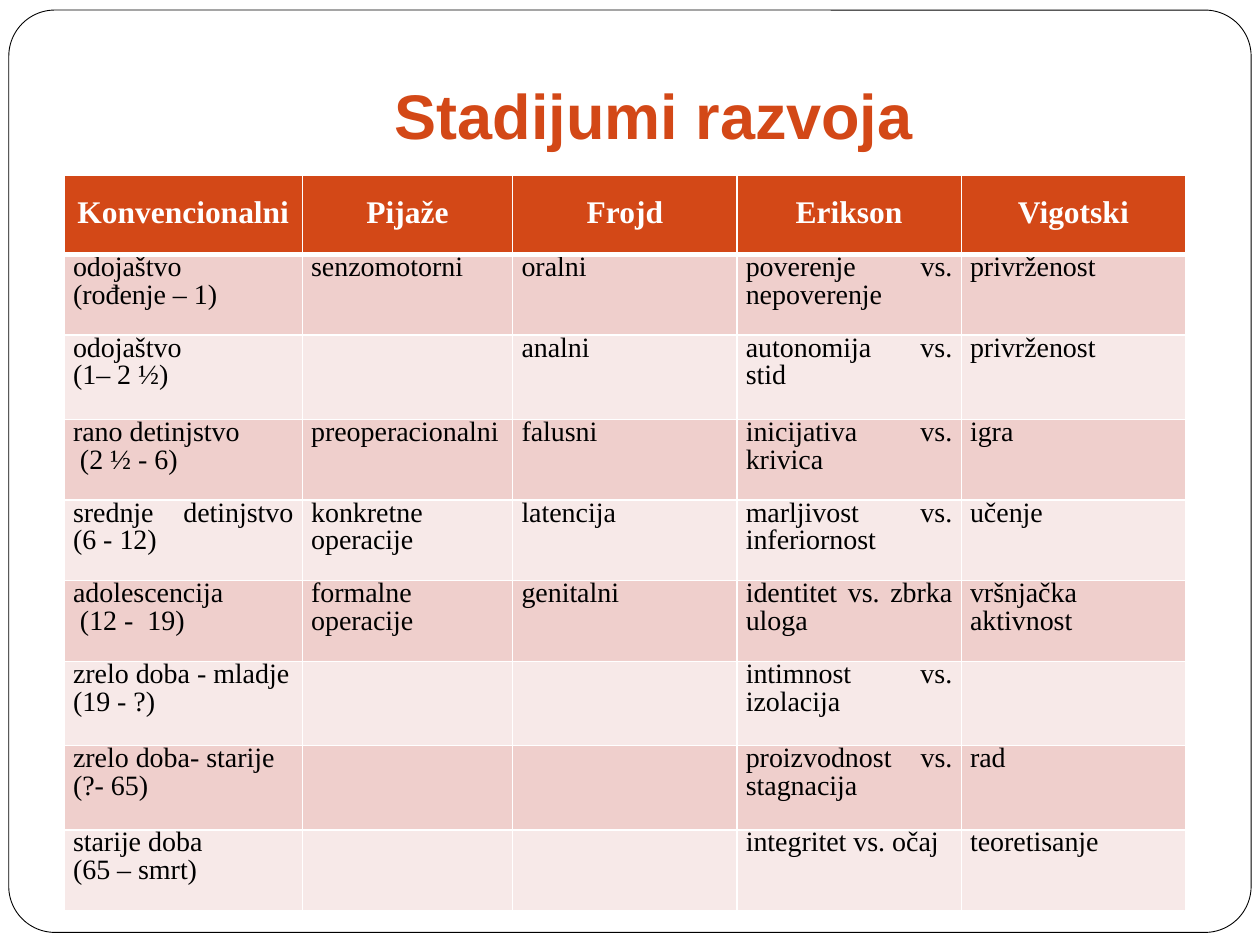
import pptx
import pptx.util
import pptx.dml.color
import pptx.enum.shapes
import pptx.enum.text
import pptx.oxml
import pptx.oxml.ns

Inches = pptx.util.Inches
Pt = pptx.util.Pt
RGBColor = pptx.dml.color.RGBColor
ALIGN = pptx.enum.text.PP_ALIGN
ANCHOR = pptx.enum.text.MSO_ANCHOR

WHITE = RGBColor(0xFF, 0xFF, 0xFF)
BLACK = RGBColor(0, 0, 0)
ORANGE = RGBColor(0xD3, 0x48, 0x17)
BANDS = [RGBColor(0xEF, 0xCF, 0xCC), RGBColor(0xF7, 0xE9, 0xE8)]

COL_WIDTHS = [1.89, 1.67, 1.78, 1.78, 1.78]
ROW_HEIGHTS = [0.63, 0.64, 0.67, 0.64, 0.64, 0.64, 0.67, 0.67, 0.64]
HEADERS = ["Konvencionalni", "Pijaže", "Frojd", "Erikson", "Vigotski"]
STAGES = [
    ["odojaštvo \n(rođenje – 1)", "senzomotorni", "oralni",
     "poverenje vs. nepoverenje", "privrženost"],
    ["odojaštvo \n(1– 2 ½)", "", "analni", "autonomija vs. stid", "privrženost"],
    ["rano detinjstvo\n (2 ½ - 6)", "preoperacionalni", "falusni",
     "inicijativa vs. krivica", "igra"],
    ["srednje detinjstvo (6 - 12)", "konkretne operacije", "latencija",
     "marljivost vs. inferiornost", "učenje"],
    ["adolescencija\n (12 -  19)", "formalne operacije", "genitalni",
     "identitet vs. zbrka uloga", "vršnjačka aktivnost"],
    ["zrelo doba - mladje\n(19 - ?)", "", "", "intimnost vs. izolacija", ""],
    ["zrelo doba- starije \n(?- 65)", "", "", "proizvodnost vs. stagnacija", "rad"],
    ["starije doba \n(65 – smrt)", "", "", "integritet vs. očaj", "teoretisanje"],
]


def write_text(tf, text, *, font, size, color, bold=False, align=ALIGN.CENTER,
               spacing=None):
    for i, line in enumerate(text.split("\n")):
        p = tf.paragraphs[0] if i == 0 else tf.add_paragraph()
        p.alignment = align
        p.line_spacing = spacing
        p.font.size = Pt(size)
        if line:
            r = p.add_run()
            r.text = line
            r.font.name = font
            r.font.size = Pt(size)
            r.font.bold = bold
            r.font.color.rgb = color


def add_frame(s):
    sp = s.shapes.add_shape(pptx.enum.shapes.MSO_SHAPE.ROUNDED_RECTANGLE,
                            Inches(0.07), Inches(0.08), Inches(9.86), Inches(7.32))
    sp.adjustments[0] = 0.05
    sp.shadow.inherit = False
    sp.fill.solid()
    sp.fill.fore_color.rgb = WHITE
    sp.line.color.rgb = BLACK
    sp.line.width = Pt(0.5)


def add_title(s, text):
    tf = s.shapes.add_textbox(Inches(0.94), Inches(0.31),
                              Inches(8.5), Inches(1)).text_frame
    tf.word_wrap = True
    tf.vertical_anchor = ANCHOR.BOTTOM
    tf.margin_bottom = Inches(0.1)
    write_text(tf, text, font="Arial", size=36, color=ORANGE, bold=True)


def set_borders(cell, bottom_width, top_width):
    tc_pr = cell._tc.get_or_add_tcPr()
    widths = {"lnL": 1, "lnR": 1, "lnT": top_width, "lnB": bottom_width}
    for i, (tag, width) in enumerate(widths.items()):
        tc_pr.insert(i, pptx.oxml.parse_xml(
            f'<a:{tag} {pptx.oxml.ns.nsdecls("a")} w="{Pt(width)}"><a:solidFill>'
            f'<a:srgbClr val="{WHITE}"/></a:solidFill></a:{tag}>'))


def format_cell(cell, text, fill, *, anchor=ANCHOR.TOP, bottom=1, top=1, **text_format):
    cell.margin_left = cell.margin_right = Inches(0.07)
    cell.margin_top = cell.margin_bottom = 0
    cell.vertical_anchor = anchor
    cell.fill.solid()
    cell.fill.fore_color.rgb = fill
    set_borders(cell, bottom, top)
    write_text(cell.text_frame, text, font="Times New Roman", **text_format)


def add_stage_table(s):
    table = s.shapes.add_table(len(ROW_HEIGHTS), len(COL_WIDTHS),
                               Inches(0.51), Inches(1.39),
                               Inches(sum(COL_WIDTHS)),
                               Inches(sum(ROW_HEIGHTS))).table
    for column, width in zip(table.columns, COL_WIDTHS):
        column.width = Inches(width)
    for row, height in zip(table.rows, ROW_HEIGHTS):
        row.height = Inches(height)
    for j, text in enumerate(HEADERS):
        format_cell(table.cell(0, j), text, ORANGE, anchor=ANCHOR.MIDDLE, bottom=3,
                    size=18, color=WHITE, bold=True, spacing=Pt(18))
    for i, stage in enumerate(STAGES):
        for j, text in enumerate(stage):
            format_cell(table.cell(i + 1, j), text, BANDS[i % 2],
                        top=3 if i == 0 else 1, size=16, color=BLACK,
                        align=ALIGN.JUSTIFY, spacing=Pt(16))


def main():
    prs = pptx.Presentation()
    prs.slide_width = Inches(10)
    prs.slide_height = Inches(7.5)
    s = prs.slides.add_slide(prs.slide_layouts[6])
    add_frame(s)
    add_title(s, "Stadijumi razvoja")
    add_stage_table(s)
    prs.save("out.pptx")


if __name__ == "__main__":
    main()
